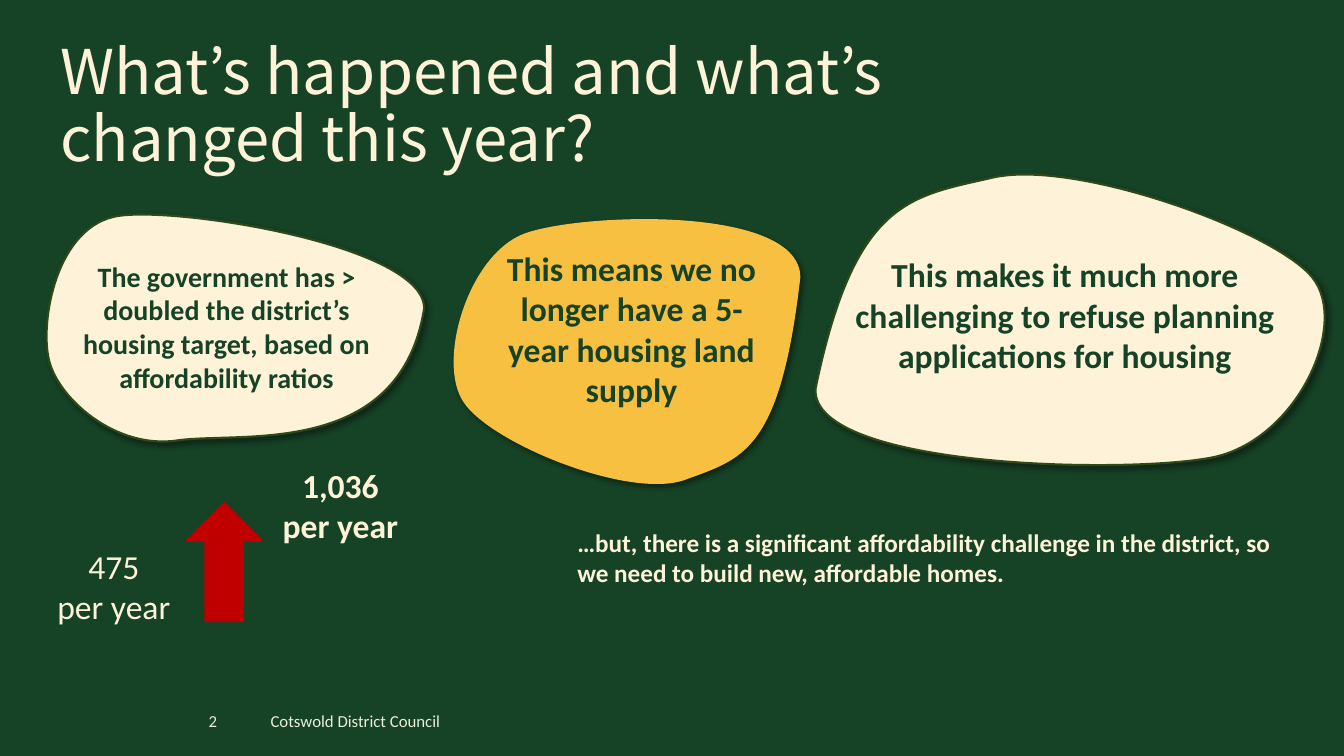
from dataclasses import dataclass
from math import cos, radians, sin

from lxml.etree import SubElement
from pptx import Presentation
from pptx.dml.color import RGBColor
from pptx.enum.shapes import MSO_SHAPE
from pptx.enum.text import MSO_ANCHOR, PP_ALIGN
from pptx.oxml.ns import qn
from pptx.util import Cm, Pt


@dataclass(frozen=True)
class Theme:
    green: str = "164226"
    cream: str = "FEF2D9"
    amber: str = "F8C041"
    outline: str = "2E4A1B"
    red: str = "C00000"
    pale: str = "EBEED9"
    heading_font: str = "Noto Sans CJK KR"
    body_font: str = "Calibri"
    heading: int = 44
    large: int = 24
    medium: int = 20
    note: int = 18
    footer: int = 12
    line: float = 1.5


class SlideBuilder:
    def __init__(self, page, theme):
        self.page = page
        self.theme = theme
        page.background.fill.solid()
        page.background.fill.fore_color.rgb = RGBColor.from_string(theme.green)

    def span(self, para, text, size, color, font=None, bold=False):
        span = para.add_run()
        span.text = text
        span.font.name = font or self.theme.body_font
        span.font.size = Pt(size)
        span.font.bold = bold
        span.font.color.rgb = RGBColor.from_string(color)

    def place(self, shape, area):
        shape.left, shape.top, shape.width, shape.height = map(Cm, area)

    def title(self, lines, area):
        title = self.page.shapes.title
        self.place(title, area)
        frame = title.text_frame
        frame.word_wrap = True
        frame.vertical_anchor = MSO_ANCHOR.MIDDLE
        para = frame.paragraphs[0]
        para.alignment = PP_ALIGN.LEFT
        para.line_spacing = 0.9
        for index, line in enumerate(lines):
            if index:
                para.add_line_break()
            self.span(para, line, self.theme.heading, self.theme.cream, self.theme.heading_font)

    def text(self, lines, area, size, color, bold=False, align=PP_ALIGN.CENTER,
             anchor=MSO_ANCHOR.TOP, parent=None):
        box = (parent or self.page).shapes.add_textbox(*map(Cm, area))
        frame = box.text_frame
        frame.word_wrap = True
        frame.vertical_anchor = anchor
        for index, line in enumerate(lines):
            para = frame.add_paragraph() if index else frame.paragraphs[0]
            para.alignment = align
            self.span(para, line, size, color, bold=bold)

    def paint(self, shape, fill, line=None):
        shape.shadow.inherit = False
        shape.fill.solid()
        shape.fill.fore_color.rgb = RGBColor.from_string(fill)
        if line:
            shape.line.color.rgb = RGBColor.from_string(line)
            shape.line.width = Pt(self.theme.line)
        else:
            shape.line.fill.background()

    def drop_shadow(self, shape):
        effects = shape.element.spPr.find(qn("a:effectLst"))
        shadow = SubElement(effects, qn("a:outerShdw"), blurRad=str(Pt(4)), dist=str(Pt(3)),
                            dir="2700000", algn="tl", rotWithShape="0")
        color = SubElement(shadow, qn("a:srgbClr"), val="000000")
        SubElement(color, qn("a:alpha"), val="40000")

    def bend(self, shape, area, points, rotation):
        self.place(shape, area)
        shape.rotation = rotation
        left, top, width, height = area
        turn = radians(-rotation)
        contour = next(shape.element.iter(qn("a:path")))
        for child in list(contour):
            contour.remove(child)
        contour.set("w", str(Cm(width)))
        contour.set("h", str(Cm(height)))
        command = SubElement(contour, qn("a:moveTo"))
        for index, (x, y) in enumerate(points):
            if index % 3 == 1:
                command = SubElement(contour, qn("a:cubicBezTo"))
            across, down = x - left - width / 2, y - top - height / 2
            SubElement(command, qn("a:pt"),
                       x=str(Cm(width / 2 + across * cos(turn) - down * sin(turn))),
                       y=str(Cm(height / 2 + across * sin(turn) + down * cos(turn))))
        SubElement(contour, qn("a:close"))

    def pebble(self, area, points, fill, line, text, text_area, size, rotation=0):
        group = self.page.shapes.add_group_shape()
        corners = [(Cm(x), Cm(y)) for x, y in points[::3]]
        builder = group.shapes.build_freeform(*corners[0])
        builder.add_line_segments(corners[1:], close=True)
        outline = builder.convert_to_shape()
        self.bend(outline, area, points, rotation)
        self.paint(outline, fill, line)
        self.drop_shadow(outline)
        self.text([text], text_area, size, self.theme.green, bold=True, parent=group)

    def up_arrow(self, area, color):
        arrow = self.page.shapes.add_shape(MSO_SHAPE.UP_ARROW, *map(Cm, area))
        self.paint(arrow, color, color)


def main():
    theme = Theme()
    deck = Presentation()
    deck.slide_width, deck.slide_height = Cm(33.87), Cm(19.05)
    slide = SlideBuilder(deck.slides.add_slide(deck.slide_layouts[5]), theme)

    slide.text(["Cotswold District Council"], (6.1, 17.65, 5.72, 1.02), theme.footer, theme.pale,
               anchor=MSO_ANCHOR.MIDDLE)
    slide.text(["2"], (2.01, 17.65, 3.71, 1.02), theme.footer, theme.pale,
               align=PP_ALIGN.RIGHT, anchor=MSO_ANCHOR.MIDDLE)
    slide.title(["What’s happened and what’s ", "changed this year?"], (1.27, 0.88, 30.45, 3.68))

    slide.pebble(
        (1.17, 5.41, 9.53, 5.72),
        [(1.24, 9.09), (0.99, 8.13), (1.42, 5.66), (3, 5.44),
         (4.57, 5.21), (10.69, 6.2), (10.69, 7.77),
         (10.08, 11.58), (6.05, 10.87), (4.47, 11.1),
         (2.9, 11.33), (1.47, 10.03), (1.24, 9.09)],
        theme.cream, theme.outline,
        "The government has > doubled the district’s housing target, based on affordability ratios",
        (1.39, 6.41, 8.64, 3.68), theme.medium)
    slide.pebble(
        (20.65, 4.45, 12.73, 7.26),
        [(33.07, 6.99), (34.01, 8.15), (32.72, 11.02), (30.63, 11.51),
         (28.55, 11.96), (20.45, 11.81), (20.55, 9.8),
         (21.54, 5), (22.96, 4.95), (25.04, 4.47),
         (27.13, 4.01), (32.13, 5.82), (33.07, 6.99)],
        theme.cream, theme.outline,
        "This makes it much more challenging to refuse planning applications for housing",
        (21.17, 6.28, 11.33, 4.37), theme.large, rotation=182.9)
    slide.pebble(
        (11.43, 5.51, 8.74, 6.68),
        [(11.68, 10.13), (11, 9.12), (11.79, 6.43), (13.21, 5.89),
         (14.63, 5.36), (20.17, 5.16), (20.17, 6.99),
         (19.66, 11.43), (18.69, 11.56), (17.27, 12.09),
         (15.88, 12.6), (12.37, 11.18), (11.68, 10.13)],
        theme.amber, None,
        "This means we no longer have a 5-year housing land supply",
        (12.37, 6.12, 7.09, 7.9), theme.large)

    slide.text(["475", "per year"], (0.01, 13.62, 5.72, 2.31), theme.large, theme.cream)
    slide.up_arrow((4.71, 12.68, 1.88, 2.97), theme.red)
    slide.text(["1,036", "per year"], (5.72, 11.58, 5.72, 2.31), theme.large, theme.cream, bold=True)
    slide.text(["…but, there is a significant affordability challenge in the district, "
                "so we need to build new, affordable homes."],
               (14.3, 13.16, 18.21, 1.8), theme.note, theme.cream, bold=True, align=PP_ALIGN.LEFT)
    deck.save("out.pptx")


if __name__ == "__main__":
    main()
